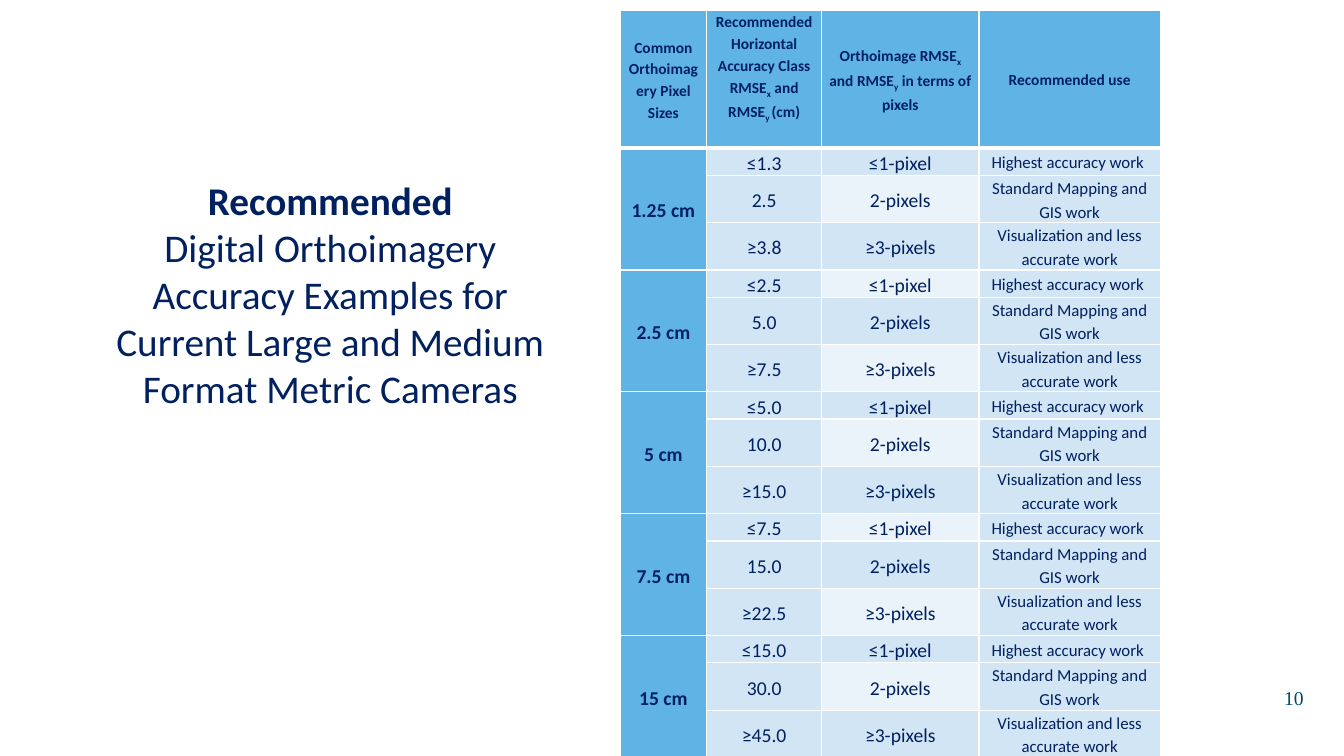
"""Build the slide of recommended orthoimagery accuracy examples."""
import pptx
import pptx.dml.color
import pptx.enum.text
import pptx.oxml
import pptx.oxml.ns
import pptx.util

TITLE = [
    ("Recommended", True),
    ("Digital Orthoimagery Accuracy Examples for Current Large and Medium "
     "Format Metric Cameras", False),
]
PAGE_NUMBER = "10"
HEADERS = [
    [("Common Orthoimagery Pixel Sizes", False)],
    [("Recommended Horizontal Accuracy Class RMSE", False), ("x", True),
     (" and RMSE", False), ("y ", True), ("(cm)", False)],
    [("Orthoimage RMSE", False), ("x", True), (" and RMSE", False), ("y", True),
     (" in terms of pixels", False)],
    [("Recommended use", False)],
]
PIXEL_SIZES = [
    ("1.25 cm", ["≤1.3", "2.5", "≥3.8"]),
    ("2.5 cm", ["≤2.5", "5.0", "≥7.5"]),
    ("5 cm", ["≤5.0", "10.0", "≥15.0"]),
    ("7.5 cm", ["≤7.5", "15.0", "≥22.5"]),
    ("15 cm", ["≤15.0", "30.0", "≥45.0"]),
]
USES = [
    ("≤1-pixel", "Highest accuracy work ", 0.27),
    ("2-pixels", "Standard Mapping and GIS work", 0.47),
    ("≥3-pixels", "Visualization and less accurate work", 0.47),
]

COLORS = {"navy": "002060", "number": "004872", "blue": "5FB4E5",
          "pale": "D2E5F5", "paler": "EAF2FA", "white": "FFFFFF"}
SLIDE = (13.33, 7.5)
TABLE_AT = (6.15, 0.1)
COLUMNS = [0.86, 1.14, 1.56, 1.8]
HEADER_HEIGHT = 1.37
TITLE_AT = (0.88, 1.7, 4.79, 2.46)
NUMBER_AT = (12.68, 6.67, 0.35, 0.5)

ALIGN = pptx.enum.text.PP_ALIGN
ANCHOR = pptx.enum.text.MSO_ANCHOR
Inches = pptx.util.Inches
rgb = pptx.dml.color.RGBColor.from_string


def style(span, size, bold=False, color="navy", face="Calibri"):
    span.font.size = pptx.util.Pt(size)
    span.font.bold = bold
    span.font.name = face
    span.font.color.rgb = rgb(COLORS[color])


def add_border(cell, side, width):
    cell._tc.get_or_add_tcPr().append(pptx.oxml.parse_xml(
        f'<a:ln{side} {pptx.oxml.ns.nsdecls("a")} w="{pptx.util.Pt(width)}">'
        f'<a:solidFill><a:srgbClr val="{COLORS["white"]}"/></a:solidFill>'
        f'</a:ln{side}>'))


def fill_cell(cell, spans, size, fill, bold=False, anchor=ANCHOR.MIDDLE,
              top=1, bottom=1):
    for side, width in zip("LRTB", (1, 1, top, bottom)):
        add_border(cell, side, width)
    cell.fill.solid()
    cell.fill.fore_color.rgb = rgb(COLORS[fill])
    cell.vertical_anchor = anchor
    cell.margin_left = cell.margin_right = Inches(0.06)
    cell.margin_top = cell.margin_bottom = 0
    para = cell.text_frame.paragraphs[0]
    para.alignment = ALIGN.CENTER
    para.line_spacing = 1.15
    for text, lowered in spans:
        span = para.add_run()
        span.text = text
        style(span, size, bold)
        if lowered:
            span._r.get_or_add_rPr().set("baseline", "-25000")


def add_accuracy_table(page):
    heights = [HEADER_HEIGHT] + [use[2] for use in USES] * len(PIXEL_SIZES)
    lengths = [Inches(n) for n in (*TABLE_AT, sum(COLUMNS), sum(heights))]
    table = page.shapes.add_table(len(heights), len(COLUMNS), *lengths).table
    table.first_row = table.horz_banding = False
    for column, width in zip(table.columns, COLUMNS):
        column.width = Inches(width)
    for row, height in zip(table.rows, heights):
        row.height = Inches(height)

    for index, spans in enumerate(HEADERS):
        anchor = ANCHOR.TOP if index == 1 else ANCHOR.MIDDLE
        fill_cell(table.cell(0, index), spans, 11, "blue", True, anchor, bottom=3)

    for group, (pixel_size, accuracies) in enumerate(PIXEL_SIZES):
        first = 1 + group * len(USES)
        for step, (pixels, use, _) in enumerate(USES):
            row = first + step
            top = 3 if row == 1 else 1
            label = [(pixel_size, False)] if step == 0 else []
            shade = "pale" if row % 2 else "paler"
            fill_cell(table.cell(row, 0), label, 14, "blue", True, top=top)
            fill_cell(table.cell(row, 1), [(accuracies[step], False)], 14, "pale", top=top)
            fill_cell(table.cell(row, 2), [(pixels, False)], 14, shade, top=top)
            fill_cell(table.cell(row, 3), [(use, False)], 12, "pale", top=top)
        table.cell(first, 0).merge(table.cell(first + len(USES) - 1, 0))


def add_title(page):
    box = page.shapes.add_textbox(*[Inches(n) for n in TITLE_AT])
    frame = box.text_frame
    frame.word_wrap = True
    frame.auto_size = pptx.enum.text.MSO_AUTO_SIZE.SHAPE_TO_FIT_TEXT
    frame.text = "\n".join(text for text, _ in TITLE)
    for para, (_, bold) in zip(frame.paragraphs, TITLE):
        para.alignment = ALIGN.CENTER
        style(para.runs[0], 28, bold)


def add_page_number(page):
    box = page.shapes.add_textbox(*[Inches(n) for n in NUMBER_AT])
    frame = box.text_frame
    frame.word_wrap = False
    frame.margin_left = 0
    frame.vertical_anchor = ANCHOR.MIDDLE
    frame.text = PAGE_NUMBER
    para = frame.paragraphs[0]
    para.alignment = ALIGN.RIGHT
    style(para.runs[0], 14, color="number", face="Times New Roman")


def main():
    deck = pptx.Presentation()
    deck.slide_width, deck.slide_height = [Inches(n) for n in SLIDE]
    page = deck.slides.add_slide(deck.slide_layouts[6])
    add_page_number(page)
    add_accuracy_table(page)
    add_title(page)
    deck.save("out.pptx")


if __name__ == "__main__":
    main()
